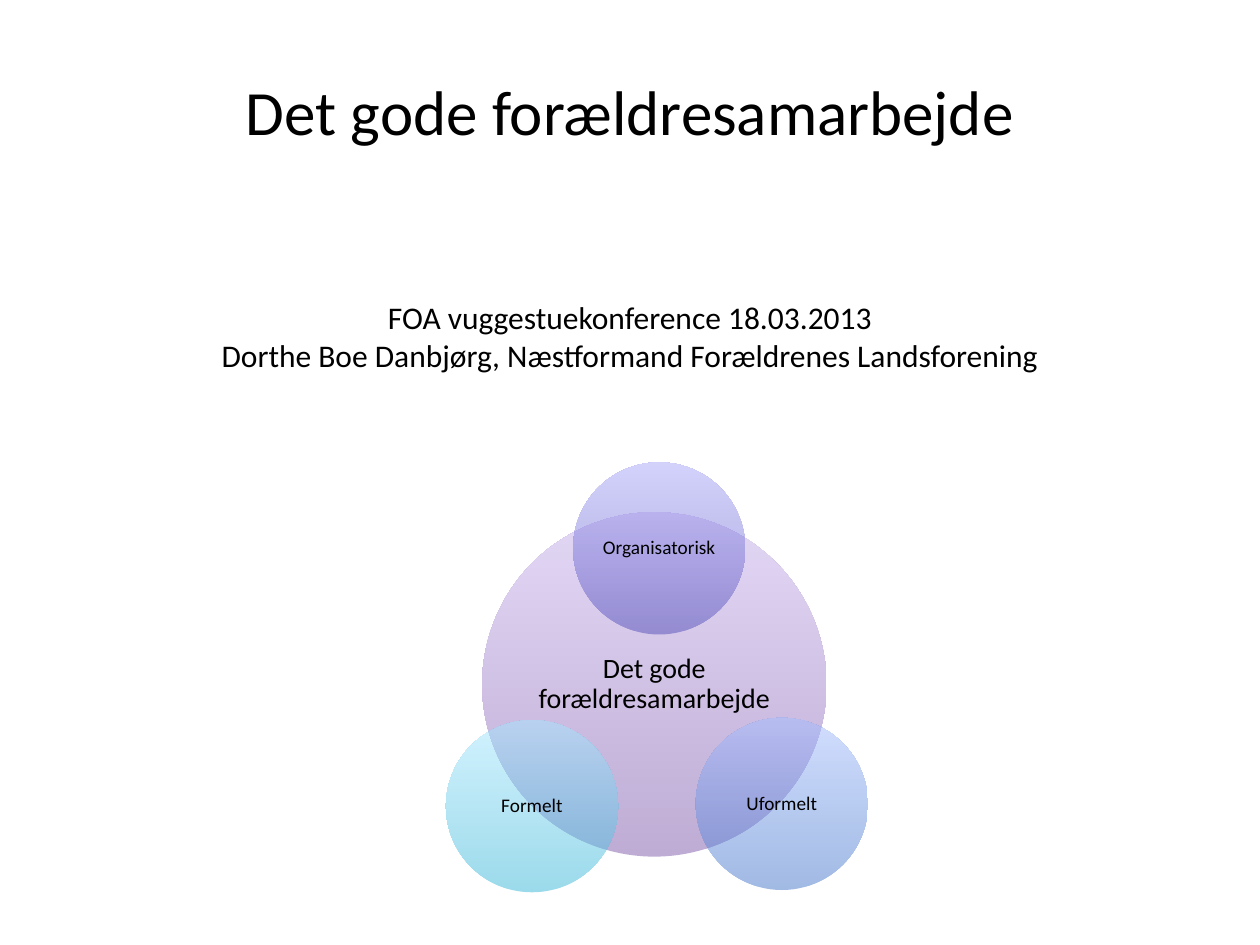
"""Build the title slide with a circle diagram of parent cooperation."""
from lxml import etree
from pptx import Presentation
from pptx.dml.color import RGBColor
from pptx.enum.shapes import MSO_SHAPE
from pptx.enum.text import MSO_ANCHOR, PP_ALIGN
from pptx.oxml.ns import qn
from pptx.util import Pt

OVAL = MSO_SHAPE.OVAL
MIDDLE = MSO_ANCHOR.MIDDLE
CENTER = PP_ALIGN.CENTER
COLORS = {
    "text": "000000",
    "purple": ("7F5BAB", "C8B0ED"),
    "indigo": ("534FBB", "A9A7F9"),
    "blue": ("4476CA", "A4BDFF"),
    "cyan": ("39B7D8", "A7E6FF"),
}
BIG, SMALL = 196.8, 98.4


class Deck:
    """Hold the style and the current slide."""

    font = "Calibri"
    alpha = 50
    inset = 1.4

    def __init__(self, prs):
        """Add a blank slide."""
        self.s = prs.slides.add_slide(prs.slide_layouts[6])

    def label(self, sp, lines, size, spacing=1.0):
        """Fill a shape with centred lines."""
        tf = sp.text_frame
        frame = {"word_wrap": True, "vertical_anchor": MIDDLE}
        frame.update({f"margin_{side}": Pt(self.inset)
                      for side in ("left", "top", "right", "bottom")})
        for name, value in frame.items():
            setattr(tf, name, value)
        for i, line in enumerate(lines):
            p = tf.add_paragraph() if i else tf.paragraphs[0]
            for name, value in {"alignment": CENTER, "line_spacing": spacing}.items():
                setattr(p, name, value)
            r = p.add_run()
            r.text = line
            for name, value in {"name": self.font, "size": Pt(size)}.items():
                setattr(r.font, name, value)
            r.font.color.rgb = RGBColor.from_string(COLORS["text"])

    def text(self, x, y, w, h, lines, size):
        """Add a text box."""
        sp = self.s.shapes.add_textbox(Pt(x), Pt(y), Pt(w), Pt(h))
        self.label(sp, lines, size)

    def circle(self, x, y, d, color, caption, size):
        """Add a translucent gradient circle with a caption."""
        sp = self.s.shapes.add_shape(OVAL, Pt(x), Pt(y), Pt(d), Pt(d))
        sp.shadow.inherit = False
        sp.line.fill.background()
        sp.fill.gradient()
        sp.fill.gradient_angle = 90
        for stop, rgb in zip(sp.fill.gradient_stops, COLORS[color]):
            stop.color.rgb = RGBColor.from_string(rgb)
        for clr in sp.element.iter(qn("a:srgbClr")):
            etree.SubElement(clr, qn("a:alpha"), val=str(self.alpha * 1000))
        self.label(sp, [caption], size, 0.9)


def main():
    """Build and save the presentation."""
    prs = Presentation()
    prs.slide_width, prs.slide_height = Pt(720), Pt(540)
    deck = Deck(prs)
    deck.text(54, 38, 612, 50, ["Det gode forældresamarbejde"], 36)
    deck.text(54, 167, 612, 50, [
        "FOA vuggestuekonference 18.03.2013",
        "Dorthe Boe Danbjørg, Næstformand Forældrenes Landsforening",
    ], 18)
    for x, y, d, color, caption, size in (
        (275.5, 292.7, BIG, "purple", "Det gode forældresamarbejde", 16),
        (327.5, 264.2, SMALL, "indigo", "Organisatorisk", 11),
        (397.6, 410.2, SMALL, "blue", "Uformelt", 11),
        (254.8, 411.5, SMALL, "cyan", "Formelt", 11),
    ):
        deck.circle(x, y, d, color, caption, size)
    prs.save("out.pptx")


if __name__ == "__main__":
    main()
